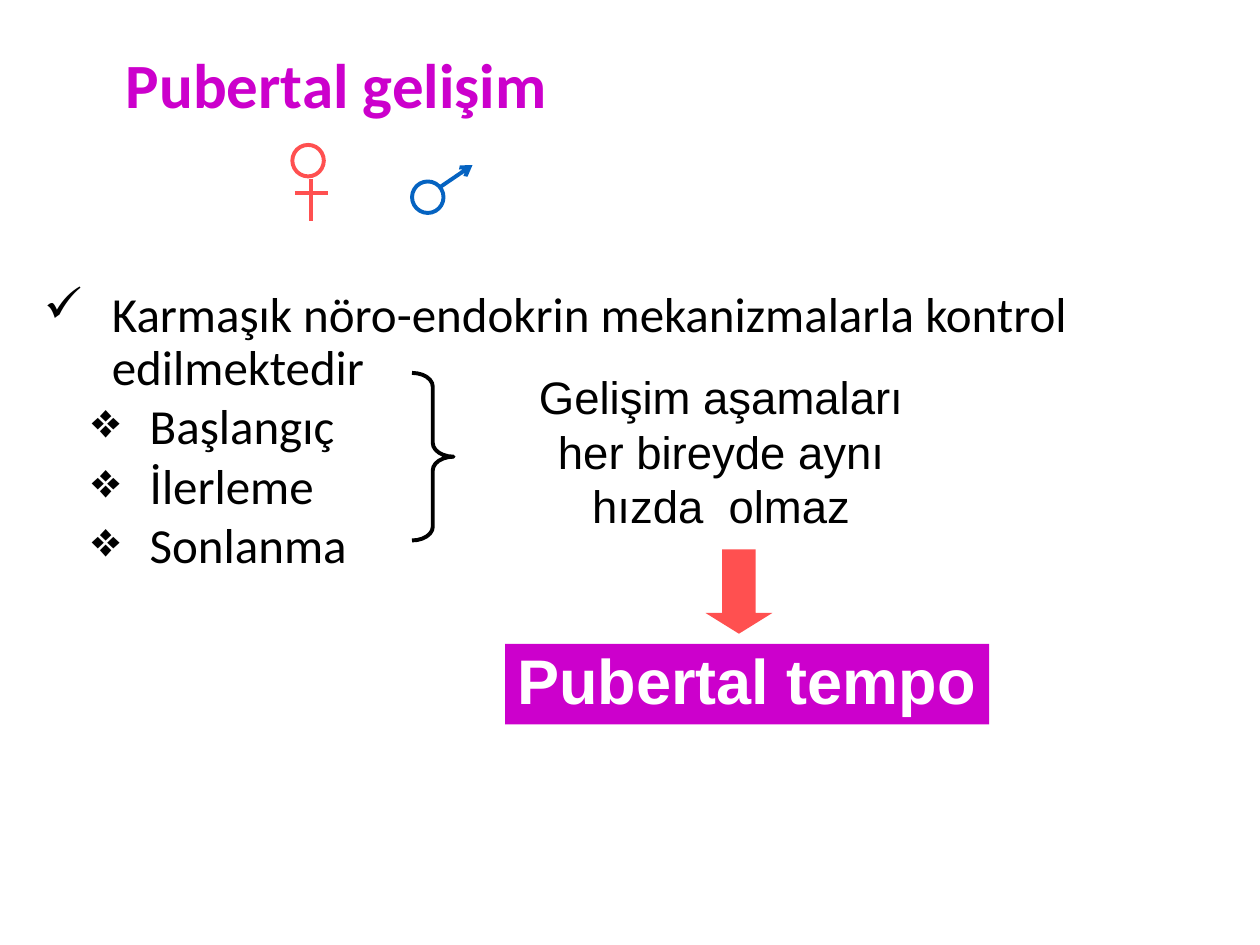
from pptx import Presentation
from pptx.dml.color import RGBColor
from pptx.enum.shapes import MSO_CONNECTOR, MSO_SHAPE as Shape
from pptx.enum.text import MSO_ANCHOR as Anchor, MSO_AUTO_SIZE as AutoSize, PP_ALIGN as Align
from pptx.oxml.ns import qn
from pptx.util import Inches, Pt
from lxml.etree import SubElement

COLORS = {
    "purple": "CC00CC",
    "red": "FF5050",
    "blue": "0563C1",
    "black": "000000",
    "white": "FFFFFF",
}
LINE_WIDTH = Pt(2.25)


def color(name):
    return RGBColor.from_string(COLORS[name])


def add_run(paragraph, text, size, font="Arial", ink="black", bold=False):
    run = paragraph.add_run()
    run.text = text
    run.font.size = Pt(size)
    run.font.name = font
    run.font.bold = bold
    run.font.color.rgb = color(ink)


def add_text_box(slide, box, anchor=Anchor.TOP):
    shape = slide.shapes.add_textbox(*map(Inches, box))
    shape.text_frame.word_wrap = True
    shape.text_frame.vertical_anchor = anchor
    return shape


def add_shape(slide, kind, box, fill=None, line=None, adjustments=()):
    shape = slide.shapes.add_shape(kind, *map(Inches, box))
    shape.shadow.inherit = False
    for index, value in enumerate(adjustments):
        shape.adjustments[index] = value
    if fill:
        shape.fill.solid()
        shape.fill.fore_color.rgb = color(fill)
    else:
        shape.fill.background()
    if line:
        shape.line.color.rgb = color(line)
        shape.line.width = LINE_WIDTH
    else:
        shape.line.fill.background()
    return shape


def add_line(slide, start, end, ink, arrow=False):
    points = map(Inches, (*start, *end))
    connector = slide.shapes.add_connector(MSO_CONNECTOR.STRAIGHT, *points)
    connector.line.color.rgb = color(ink)
    connector.line.width = LINE_WIDTH
    if arrow:
        SubElement(connector.line._get_or_add_ln(), qn("a:tailEnd"), type="arrow")
    SubElement(connector._element.spPr, qn("a:effectLst"))


def set_bullet(paragraph, character, indent, hanging):
    properties = paragraph._p.get_or_add_pPr()
    properties.set("marL", str(Inches(indent)))
    properties.set("indent", str(-Inches(hanging)))
    bullet_color = SubElement(properties, qn("a:buClr"))
    SubElement(bullet_color, qn("a:srgbClr"), val=COLORS["black"])
    SubElement(properties, qn("a:buChar"), char=character)


def add_title(slide):
    shape = add_text_box(slide, (0.9, 0.3, 7.35, 0.8), Anchor.MIDDLE)
    paragraph = shape.text_frame.paragraphs[0]
    paragraph.line_spacing = 0.9
    add_run(paragraph, "Pubertal gelişim", 36, "Calibri", "purple", bold=True)


def add_bullets(slide):
    frame = add_text_box(slide, (0.25, 1.13, 9.67, 4.7)).text_frame
    frame.margin_top = Inches(1.17)
    main_point = frame.paragraphs[0]
    main_point.line_spacing = 0.9
    set_bullet(main_point, "✓", 0.54, 0.54)
    add_run(main_point, "Karmaşık nöro-endokrin mekanizmalarla kontrol edilmektedir", 28, "Calibri")
    for stage in ("Başlangıç", "İlerleme", "Sonlanma"):
        paragraph = frame.add_paragraph()
        paragraph.level = 1
        paragraph.line_spacing = 0.9
        paragraph.space_before = Pt(3.8)
        set_bullet(paragraph, "❖", 0.84, 0.46)
        add_run(paragraph, stage, 28, "Calibri")


def add_tempo(slide):
    shape = add_shape(slide, Shape.RECTANGLE, (4.01, 5.11, 3.84, 0.64), fill="purple")
    frame = shape.text_frame
    frame.word_wrap = False
    frame.auto_size = AutoSize.SHAPE_TO_FIT_TEXT
    frame.vertical_anchor = Anchor.TOP
    paragraph = frame.paragraphs[0]
    paragraph.alignment = Align.LEFT
    paragraph.line_spacing = 0.9
    paragraph.space_before = Pt(7.2)
    add_run(paragraph, "Pubertal tempo", 36, ink="white", bold=True)
    add_shape(slide, Shape.DOWN_ARROW, (5.6, 4.36, 0.53, 0.67), fill="red",
              adjustments=(0.5, 0.31))


def add_gender_signs(slide):
    add_shape(slide, Shape.OVAL, (3.27, 1.44, 0.25, 0.25), line="blue")
    add_line(slide, (3.5, 1.48), (3.75, 1.31), "blue", arrow=True)
    add_shape(slide, Shape.OVAL, (2.32, 1.15, 0.25, 0.25), line="red")
    add_line(slide, (2.47, 1.42), (2.47, 1.75), "red")
    add_line(slide, (2.34, 1.53), (2.6, 1.53), "red")


def add_stage_note(slide):
    add_shape(slide, Shape.RIGHT_BRACE, (3.27, 2.96, 0.33, 1.33), line="black",
              adjustments=(0.33, 0.5))
    shape = add_text_box(slide, (4.06, 2.88, 3.33, 1.4), Anchor.MIDDLE)
    shape.text_frame.auto_size = AutoSize.SHAPE_TO_FIT_TEXT
    paragraph = shape.text_frame.paragraphs[0]
    paragraph.alignment = Align.CENTER
    paragraph.space_before = Pt(5.2)
    add_run(paragraph, "Gelişim aşamaları her bireyde aynı hızda  olmaz", 26)


def main():
    presentation = Presentation()
    presentation.slide_width = Inches(10)
    presentation.slide_height = Inches(7.5)
    slide = presentation.slides.add_slide(presentation.slide_layouts[6])
    add_title(slide)
    add_bullets(slide)
    add_tempo(slide)
    add_gender_signs(slide)
    add_stage_note(slide)
    presentation.save("out.pptx")


if __name__ == "__main__":
    main()
